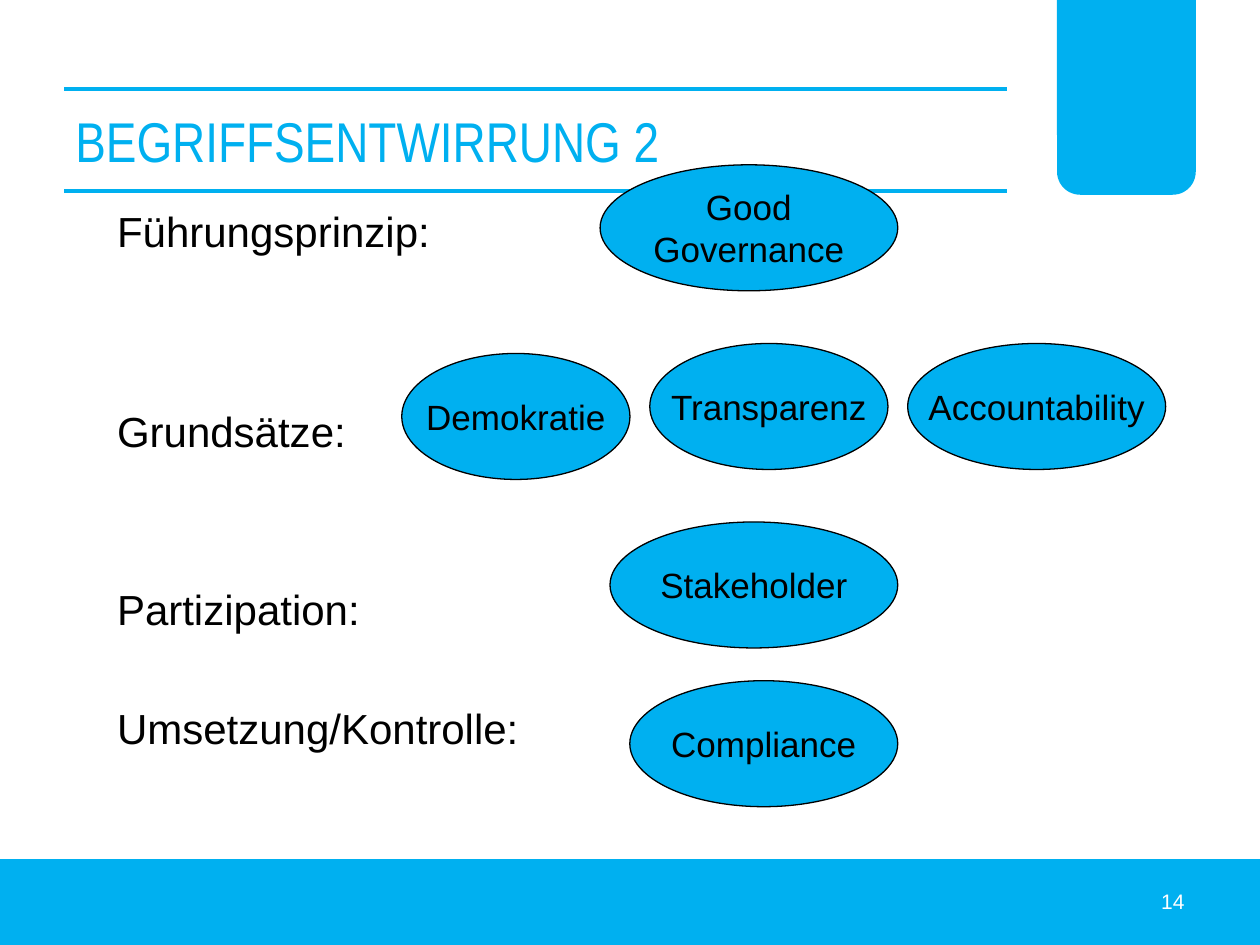
"""Build the slide that sorts governance terms by level."""
import pptx
import pptx.util
from pptx.dml.color import RGBColor
from pptx.enum.shapes import MSO_CONNECTOR, MSO_SHAPE
from pptx.enum.text import MSO_ANCHOR, PP_ALIGN
from pptx.oxml.xmlchemy import OxmlElement

Pt = pptx.util.Pt
BLUE = RGBColor(0x00, 0xB0, 0xF0)
BLACK = RGBColor(0x00, 0x00, 0x00)
WHITE = RGBColor(0xFF, 0xFF, 0xFF)

WIDTH, HEIGHT = 720, 540
FOOTER_TOP = 491
RULE_LEFT, RULE_RIGHT = 36.7, 575.3
RULE_HEIGHTS = (50.6, 109.2)
TERM_HEIGHT = 72

TITLE = "BEGRIFFSENTWIRRUNG 2"
SLIDE_NUMBER = "14"
LEVELS = [
    ("Führungsprinzip:", 0),
    ("Grundsätze:", 85),
    ("Partizipation:", 73),
    ("Umsetzung/Kontrolle:", 39.3),
]
TERMS = [
    (("Good", "Governance"), 342.9, 94.2, 170.1),
    (("Transparenz",), 371.3, 196.3, 136.1),
    (("Compliance",), 359.9, 389, 153.1),
    (("Accountability",), 518.7, 196.3, 147.4),
    (("Stakeholder",), 348.6, 298.3, 164.4),
    (("Demokratie",), 229.6, 202, 130.4),
]


def write(shape, lines, size, color, font="Arial", align=PP_ALIGN.LEFT,
          anchor=MSO_ANCHOR.MIDDLE, wrap=True, gaps=None, top_margin=3.6):
    frame = shape.text_frame
    frame.word_wrap = wrap
    frame.vertical_anchor = anchor
    frame.margin_top = Pt(top_margin)
    for index, line in enumerate(lines):
        paragraph = frame.add_paragraph() if index else frame.paragraphs[0]
        paragraph.text = line
        paragraph.alignment = align
        paragraph.font.name = font
        paragraph.font.size = Pt(size)
        paragraph.font.color.rgb = color
        if gaps and index:
            paragraph.space_before = Pt(gaps[index])


def add_block(slide, kind, left, top, width, height, outline=None):
    shape = slide.shapes.add_shape(kind, Pt(left), Pt(top), Pt(width), Pt(height))
    shape.shadow.inherit = False
    shape.fill.solid()
    shape.fill.fore_color.rgb = BLUE
    if outline is None:
        shape.line.fill.background()
    else:
        shape.line.color.rgb = outline
        shape.line.width = Pt(0.75)
    return shape


def add_text(slide, left, top, width, height, lines, **text_format):
    box = slide.shapes.add_textbox(Pt(left), Pt(top), Pt(width), Pt(height))
    write(box, lines, **text_format)


def add_rule(slide, height):
    rule = slide.shapes.add_connector(
        MSO_CONNECTOR.STRAIGHT, Pt(RULE_LEFT), Pt(height), Pt(RULE_RIGHT), Pt(height))
    rule.line.color.rgb = BLUE
    rule.line.width = Pt(2.25)
    rule._element.spPr.append(OxmlElement("a:effectLst"))


def main():
    presentation = pptx.Presentation()
    presentation.slide_width, presentation.slide_height = Pt(WIDTH), Pt(HEIGHT)
    slide = presentation.slides.add_slide(presentation.slide_layouts[6])

    add_block(slide, MSO_SHAPE.RECTANGLE, 0, FOOTER_TOP, WIDTH, HEIGHT - FOOTER_TOP)
    tab = add_block(slide, MSO_SHAPE.ROUND_2_SAME_RECTANGLE, 604, 0, 79.3, 111.3)
    tab.rotation = 180
    for height in RULE_HEIGHTS:
        add_rule(slide, height)

    add_text(slide, 36, 49, 568, 62.6, [TITLE], size=32, color=BLUE,
             font="Arial Narrow", wrap=False)
    labels, gaps = zip(*LEVELS)
    add_text(slide, 59.8, 111.6, 612, 354.2, labels, size=24, color=BLACK,
             anchor=MSO_ANCHOR.TOP, gaps=gaps, top_margin=6)

    for lines, left, top, width in TERMS:
        term = add_block(slide, MSO_SHAPE.OVAL, left, top, width, TERM_HEIGHT, BLACK)
        write(term, lines, size=20, color=BLACK, align=PP_ALIGN.CENTER, wrap=False)

    add_text(slide, 516.2, 500.4, 167.8, 28.8, [SLIDE_NUMBER], size=12,
             color=WHITE, align=PP_ALIGN.RIGHT)
    presentation.save("out.pptx")


if __name__ == "__main__":
    main()
